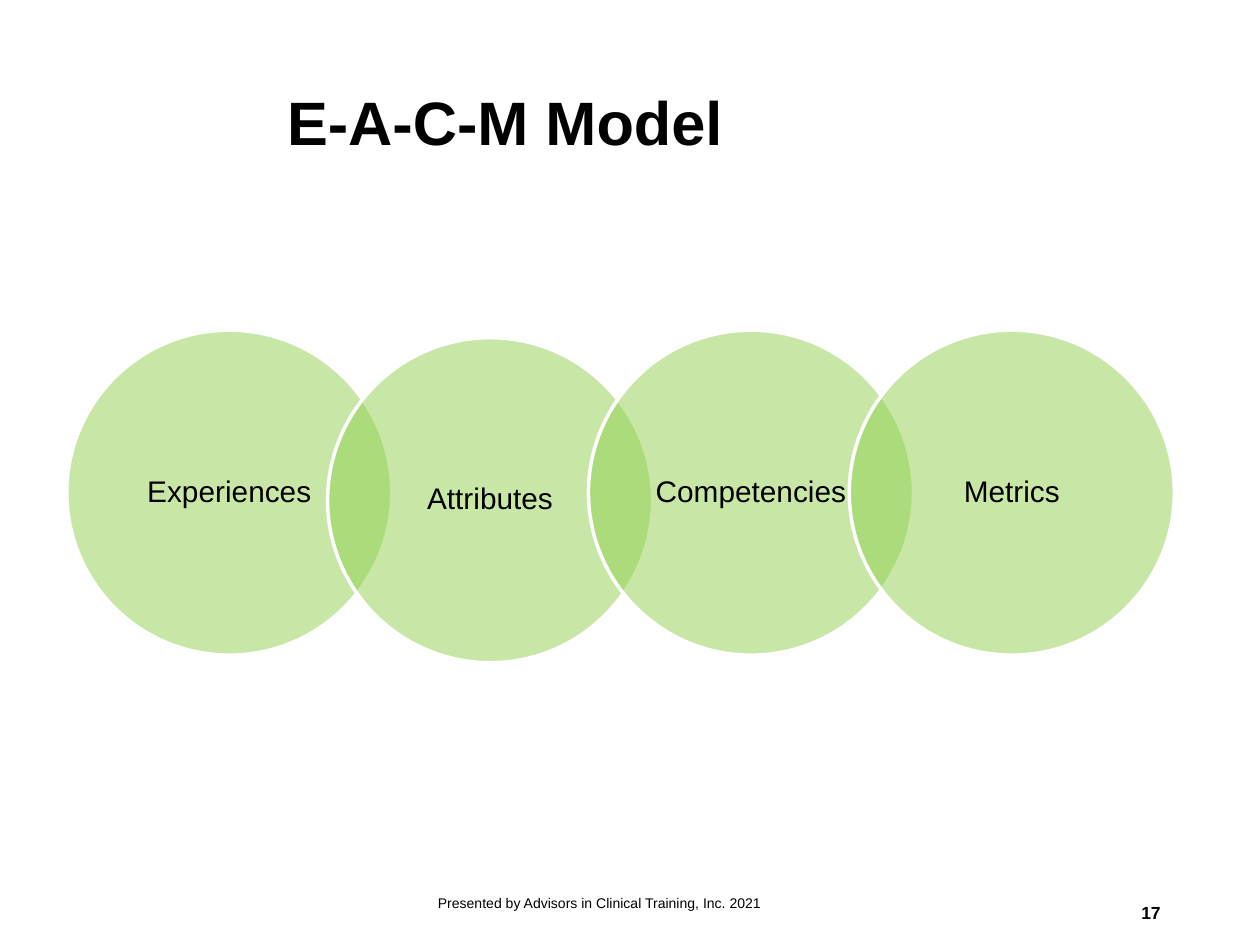
import pptx
import pptx.util
import pptx.dml.color
import pptx.enum.shapes
import pptx.enum.text
import pptx.oxml.ns
import lxml.etree

Inches = pptx.util.Inches
Align = pptx.enum.text.PP_ALIGN
COLORS = {"text": "000000", "circle": "92D050", "outline": "FFFFFF"}


def rgb(name):
    return pptx.dml.color.RGBColor.from_string(COLORS[name])


def write_text(shape, text, size, align, bold=False, inset_x=0.1, inset_y=0.1):
    frame = shape.text_frame
    frame.word_wrap = True
    frame.vertical_anchor = pptx.enum.text.MSO_ANCHOR.MIDDLE
    frame.margin_left = frame.margin_right = Inches(inset_x)
    frame.margin_top = frame.margin_bottom = Inches(inset_y)
    paragraph = frame.paragraphs[0]
    paragraph.text = text
    paragraph.alignment = align
    paragraph.font.name = "Arial"
    paragraph.font.size = pptx.util.Pt(size)
    paragraph.font.bold = bold
    paragraph.font.color.rgb = rgb("text")
    return paragraph


presentation = pptx.Presentation()
presentation.slide_width = Inches(10)
presentation.slide_height = Inches(7.5)
slide = presentation.slides.add_slide(presentation.slide_layouts[6])

# Title
title = slide.shapes.add_textbox(Inches(2.18), Inches(0.27), Inches(7.14), Inches(1.45))
write_text(title, "E-A-C-M Model", 35, Align.LEFT, bold=True).line_spacing = 0.9

# Slide number
number = slide.shapes.add_textbox(Inches(7.06), Inches(7.04), Inches(2.25), Inches(0.4))
write_text(number, "17", 10, Align.RIGHT, bold=True, inset_y=0.05)

# Chain of overlapping circles, the second one slightly lower
diameter, step = 2.58, 2.07
circles = [("Experiences", 2.62), ("Attributes", 2.68), ("Competencies", 2.62), ("Metrics", 2.62)]
for index, (label, top) in enumerate(circles):
    circle = slide.shapes.add_shape(
        pptx.enum.shapes.MSO_SHAPE.OVAL,
        Inches(0.53 + index * step), Inches(top), Inches(diameter), Inches(diameter))
    circle.shadow.inherit = False
    circle.fill.solid()
    circle.fill.fore_color.rgb = rgb("circle")
    color = circle.fill._xPr.find(".//" + pptx.oxml.ns.qn("a:srgbClr"))
    lxml.etree.SubElement(color, pptx.oxml.ns.qn("a:alpha"), val="50000")
    circle.line.color.rgb = rgb("outline")
    circle.line.width = pptx.util.Pt(2)
    paragraph = write_text(circle, label, 17, Align.CENTER, inset_x=0.14, inset_y=0.02)
    paragraph.line_spacing = 0.9

# Footer
footer = slide.shapes.add_textbox(Inches(3.31), Inches(6.97), Inches(2.9), Inches(0.4))
write_text(footer, "Presented by Advisors in Clinical Training, Inc. 2021", 8, Align.CENTER, inset_x=0)

presentation.save("out.pptx")
